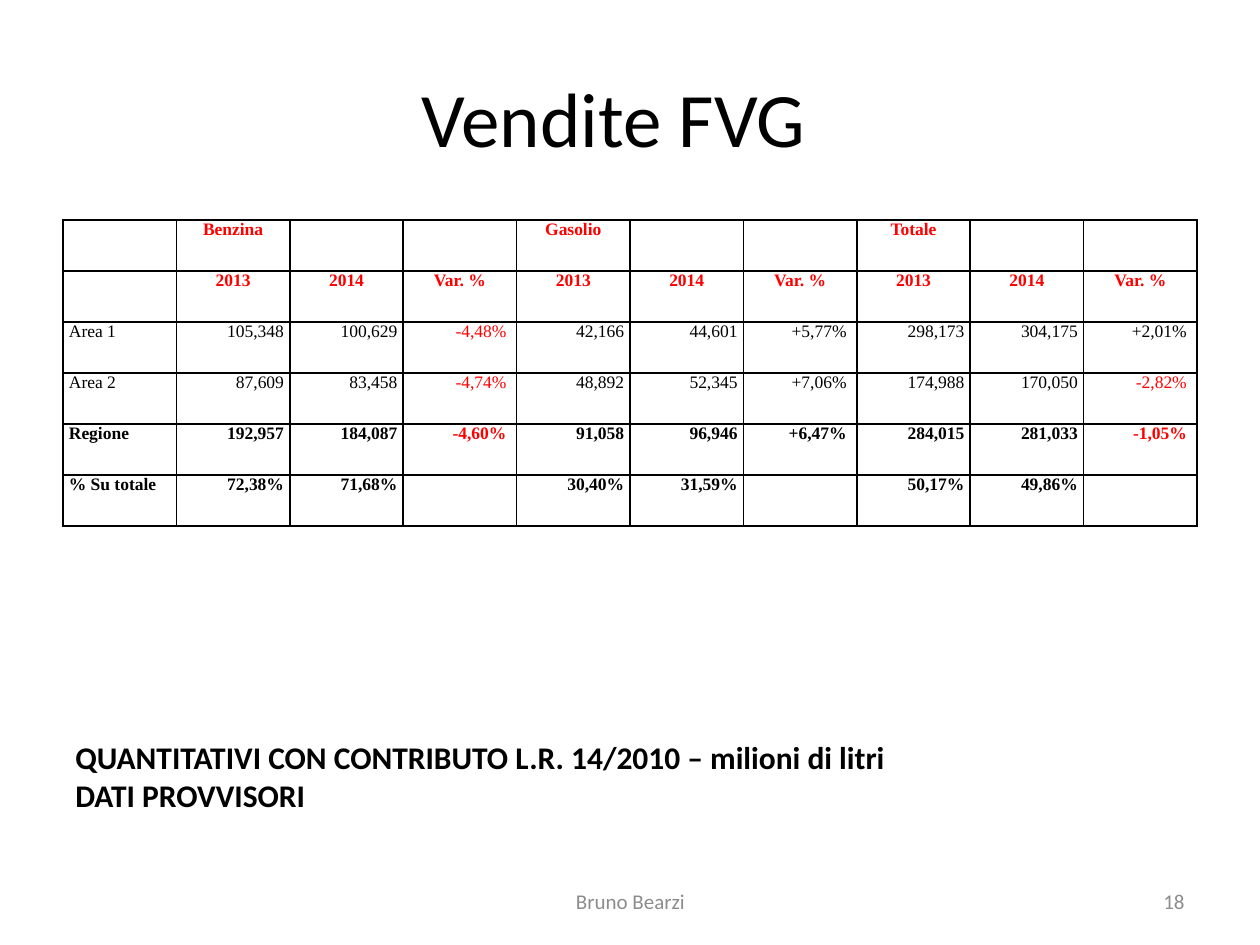
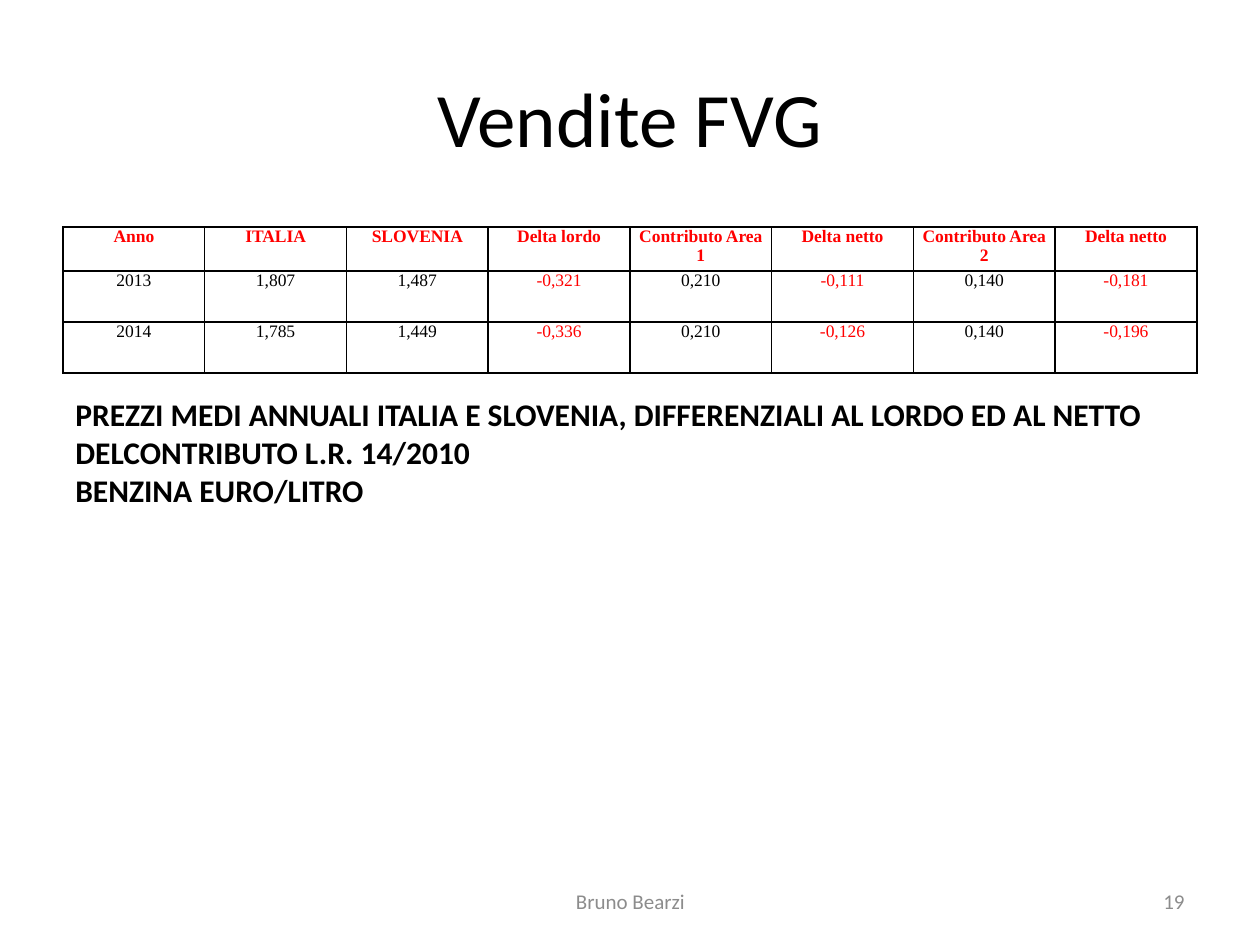
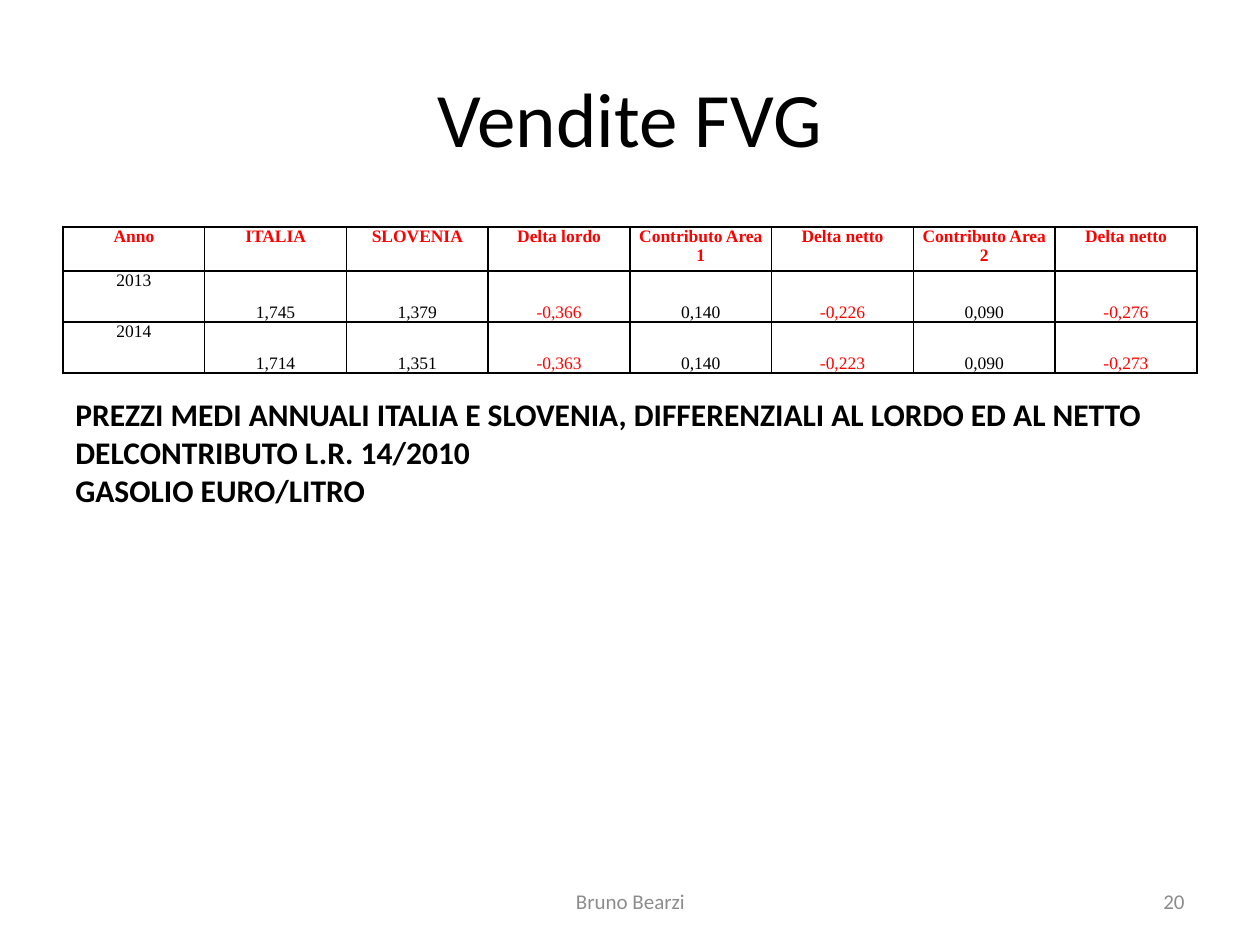
from dataclasses import dataclass
from typing import NamedTuple

from lxml.etree import SubElement
from pptx import Presentation
from pptx.dml.color import RGBColor
from pptx.enum.text import MSO_ANCHOR, MSO_AUTO_SIZE, PP_ALIGN
from pptx.oxml.ns import qn
from pptx.util import Emu, Pt

# Shared look
PX_PER_INCH = 126
COLORS = {"text": "000000", "accent": "FF0000", "footer": "8C8C8C"}
SANS, SERIF = "Calibri", "Times New Roman"
TITLE, AUTHOR = "Vendite FVG", "Bruno Bearzi"
LEFT, WIDTH = 63, 1134
ROW_HEIGHT = 51


class Box(NamedTuple):
    x: int
    y: int
    w: int
    h: int


@dataclass
class SalesTable:
    y: int
    rows: list[list[str]]
    header_height: int
    header_rows: int = 1
    bold_from: int = 99
    centered: bool = True
    values_at_bottom: bool = False


@dataclass
class SalesSlide:
    number: int
    table: SalesTable
    note: Box
    note_lines: list[str]
    title_x: int = LEFT


# Content
VOLUMES = [
    ["", "Benzina", "", "", "Gasolio", "", "", "Totale", "", ""],
    ["", *["2013", "2014", "Var. %"] * 3],
    ["Area 1", "105,348", "100,629", "-4,48% ", "42,166", "44,601", "+5,77% ",
     "298,173", "304,175", "+2,01% "],
    ["Area 2", "87,609", "83,458", "-4,74% ", "48,892", "52,345", "+7,06% ",
     "174,988", "170,050", "-2,82% "],
    ["Regione", "192,957", "184,087", "-4,60% ", "91,058", "96,946", "+6,47% ",
     "284,015", "281,033", "-1,05% "],
    ["% Su totale", "72,38%", "71,68%", "", "30,40%", "31,59%", "",
     "50,17%", "49,86%", ""],
]
PRICE_HEADER = ["Anno", "ITALIA", "SLOVENIA", "Delta lordo", "Contributo Area 1",
                "Delta netto", "Contributo Area 2", "Delta netto"]
PETROL = [
    ["2013", "1,807", "1,487", "-0,321", "0,210", "-0,111", "0,140", "-0,181"],
    ["2014", "1,785", "1,449", "-0,336", "0,210", "-0,126", "0,140", "-0,196"],
]
DIESEL = [
    ["2013", "1,745", "1,379", "-0,366", "0,140", "-0,226", "0,090", "-0,276"],
    ["2014", "1,714", "1,351", "-0,363", "0,140", "-0,223", "0,090", "-0,273"],
]
PRICE_NOTE = ("PREZZI MEDI ANNUALI ITALIA E SLOVENIA, DIFFERENZIALI AL LORDO "
              "ED AL NETTO DELCONTRIBUTO L.R. 14/2010")


def px(value: float) -> Emu:
    return Emu(round(value * 914400 / PX_PER_INCH))


def style(p, size: int, font: str, color: str, align=PP_ALIGN.LEFT, bold: bool = False) -> None:
    p.alignment = align
    p.font.size, p.font.name, p.font.bold = Pt(size), font, bold
    p.font.color.rgb = RGBColor.from_string(COLORS[color])


def add_title(s, x: int) -> None:
    sp = s.shapes.title
    sp.left, sp.top, sp.width, sp.height = px(x), px(38), px(WIDTH), px(157)
    tf = sp.text_frame
    tf.text = TITLE
    tf.vertical_anchor = MSO_ANCHOR.MIDDLE
    style(tf.paragraphs[0], 44, SANS, "text", PP_ALIGN.CENTER)


def add_text(s, box: Box, lines: list[str], size: int, color: str,
             align=PP_ALIGN.LEFT, bold: bool = False):
    tf = s.shapes.add_textbox(*map(px, box)).text_frame
    tf.word_wrap = True
    tf.text = "\n".join(lines)
    for p in tf.paragraphs:
        style(p, size, SANS, color, align, bold)
    return tf


def add_footer(s, number: int) -> None:
    for box, text, align in [
        (Box(903, 876, 294, 50), str(number), PP_ALIGN.RIGHT),
        (Box(431, 876, 399, 50), AUTHOR, PP_ALIGN.CENTER),
    ]:
        tf = add_text(s, box, [text], 12, "footer", align)
        tf.vertical_anchor = MSO_ANCHOR.MIDDLE


def add_borders(cell) -> None:
    tcPr = cell._tc.get_or_add_tcPr()
    for i, side in enumerate(("lnL", "lnR", "lnT", "lnB")):
        ln = SubElement(tcPr, qn(f"a:{side}"), w=str(Pt(1)))
        fill = SubElement(ln, qn("a:solidFill"))
        SubElement(fill, qn("a:srgbClr"), val=COLORS["text"])
        tcPr.insert(i, ln)


def add_sales_table(s, t: SalesTable) -> None:
    n_rows, n_cols = len(t.rows), len(t.rows[0])
    height = t.header_height + ROW_HEIGHT * (n_rows - 1)
    table = s.shapes.add_table(n_rows, n_cols, px(LEFT), px(t.y), px(WIDTH), px(height)).table
    table.first_row = table.horz_banding = False
    for i, row in enumerate(t.rows):
        table.rows[i].height = px(ROW_HEIGHT if i else t.header_height)
        is_header = i < t.header_rows
        for j, text in enumerate(row):
            cell = table.cell(i, j)
            cell.text = text
            cell.margin_left = cell.margin_right = px(6)
            cell.margin_top = cell.margin_bottom = 0
            at_bottom = t.values_at_bottom and not is_header and j > 0
            cell.vertical_anchor = MSO_ANCHOR.BOTTOM if at_bottom else MSO_ANCHOR.TOP
            if is_header or t.centered:
                align = PP_ALIGN.CENTER
            else:
                align = PP_ALIGN.RIGHT if j else PP_ALIGN.LEFT
            color = "accent" if is_header or text.startswith("-") else "text"
            style(cell.text_frame.paragraphs[0], 10, SERIF, color, align,
                  is_header or i >= t.bold_from)
            cell.fill.background()
            add_borders(cell)


def price_slide(number: int, fuel: str, prices: list[list[str]], at_bottom: bool) -> SalesSlide:
    table = SalesTable(227, [PRICE_HEADER, *prices], 44, values_at_bottom=at_bottom)
    return SalesSlide(number, table, Box(LEFT, 389, WIDTH, 127),
                      [PRICE_NOTE, f"{fuel} EURO/LITRO"])


def main() -> None:
    prs = Presentation()
    prs.slide_width, prs.slide_height = px(1260), px(945)
    slides = [
        SalesSlide(
            18,
            SalesTable(220, VOLUMES, ROW_HEIGHT, header_rows=2, bold_from=4, centered=False),
            Box(LEFT, 732, WIDTH, 89),
            ["QUANTITATIVI CON CONTRIBUTO L.R. 14/2010 – milioni di litri", "DATI PROVVISORI"],
            title_x=47,
        ),
        price_slide(19, "BENZINA", PETROL, at_bottom=False),
        price_slide(20, "GASOLIO", DIESEL, at_bottom=True),
    ]
    for item in slides:
        s = prs.slides.add_slide(prs.slide_layouts[5])
        add_title(s, item.title_x)
        add_sales_table(s, item.table)
        tf = add_text(s, item.note, item.note_lines, 18, "text", bold=True)
        tf.auto_size = MSO_AUTO_SIZE.SHAPE_TO_FIT_TEXT
        add_footer(s, item.number)
    prs.save("out.pptx")


if __name__ == "__main__":
    main()
